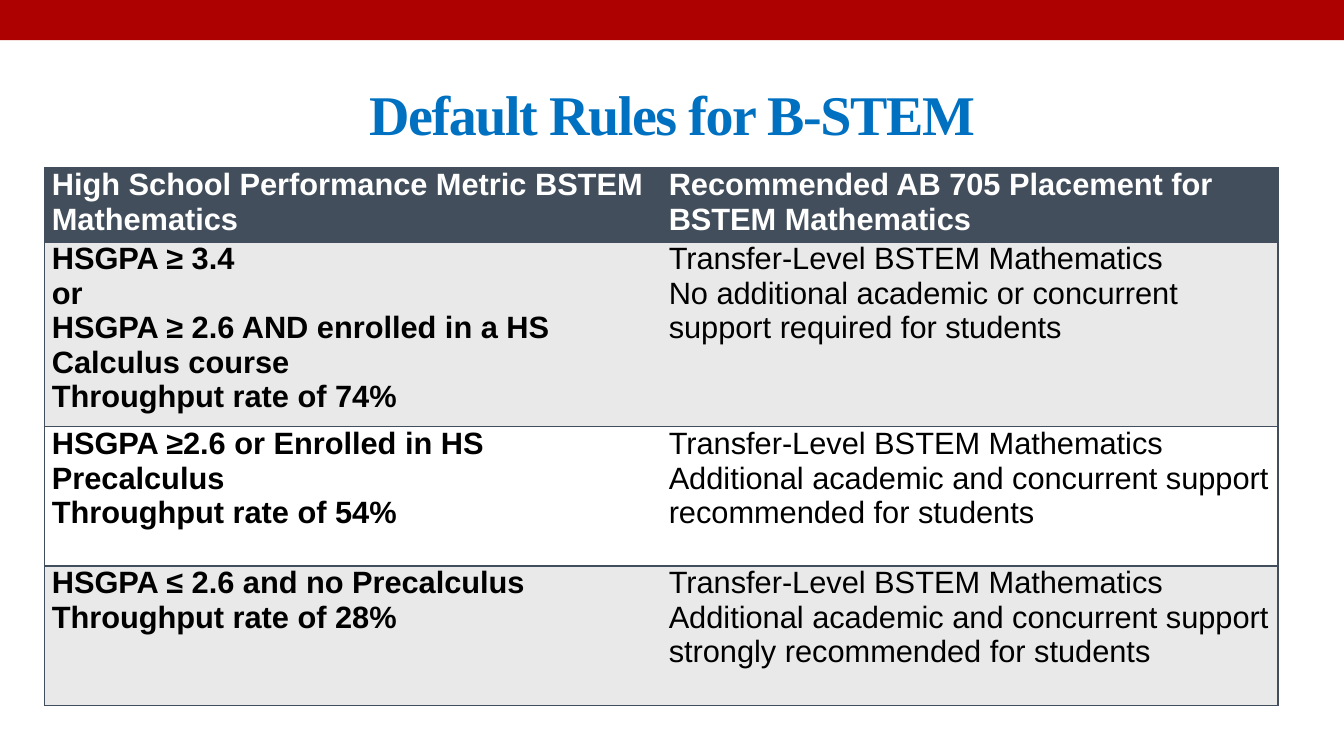
from dataclasses import dataclass

from lxml.etree import SubElement
from pptx import Presentation
from pptx.dml.color import RGBColor as RGB
from pptx.enum.shapes import MSO_SHAPE as Shape
from pptx.enum.text import MSO_ANCHOR as Anchor, PP_ALIGN as Align
from pptx.oxml.ns import qn
from pptx.slide import Slide
from pptx.table import _Cell as Cell
from pptx.util import Pt

COLORS = {
    "banner": "AD0101",
    "title": "0070C0",
    "header": "424E5B",
    "band": "E9E9EA",
    "white": "FFFFFF",
    "black": "000000",
}
COLUMN_WIDTH = 440.64


@dataclass
class RuleRow:
    height: float
    metric: list[str]
    placement: list[str]
    fill: str
    color: str = "black"
    header: bool = False


TRANSFER = "Transfer-Level BSTEM Mathematics"
RULES = [
    RuleRow(50, ["High School Performance Metric BSTEM Mathematics"],
            ["Recommended AB 705 Placement for BSTEM Mathematics"],
            "header", "white", True),
    RuleRow(124.3,
            ["HSGPA ≥ 3.4", "or",
             "HSGPA ≥ 2.6 AND enrolled in a HS Calculus course",
             "Throughput rate of 74%"],
            [TRANSFER, "No additional academic or concurrent support required for students"],
            "band"),
    RuleRow(99.5,
            ["HSGPA ≥2.6 or Enrolled in HS Precalculus", "Throughput rate of 54%"],
            [TRANSFER, "Additional academic and concurrent support recommended for students"],
            "white"),
    RuleRow(99.5,
            ["HSGPA ≤ 2.6 and no Precalculus", "Throughput rate of 28%"],
            [TRANSFER,
             "Additional academic and concurrent support strongly recommended for students"],
            "band"),
]


def rgb(name: str) -> RGB:
    return RGB.from_string(COLORS[name])


def draw_banner(slide: Slide) -> None:
    banner = slide.shapes.add_shape(Shape.RECTANGLE, 0, 0, Pt(960), Pt(28.8))
    banner.shadow.inherit = False
    banner.fill.solid()
    banner.fill.fore_color.rgb = rgb("banner")
    banner.line.fill.background()


def draw_title(slide: Slide) -> None:
    frame = slide.shapes.add_textbox(Pt(48), Pt(42), Pt(864), Pt(78)).text_frame
    frame.word_wrap = True
    frame.vertical_anchor = Anchor.MIDDLE
    heading = frame.paragraphs[0]
    heading.alignment = Align.CENTER
    heading.font.name = "Times New Roman"
    heading.font.size = Pt(40)
    heading.font.bold = True
    heading.font.color.rgb = rgb("title")
    run = heading.add_run()
    run.text = "Default Rules for B-STEM"
    run.font._element.set("spc", "-100")


def set_borders(cell: Cell, inner_side: str) -> None:
    properties = cell._tc.get_or_add_tcPr()
    for position, side in enumerate(("lnL", "lnR", "lnT", "lnB")):
        border = SubElement(properties, qn(f"a:{side}"), w=str(Pt(1)))
        if side == inner_side:
            SubElement(border, qn("a:noFill"))
        else:
            fill = SubElement(border, qn("a:solidFill"))
            SubElement(fill, qn("a:srgbClr"), val=COLORS["header"])
        properties.insert(position, border)


def fill_cell(cell: Cell, lines: list[str], rule: RuleRow, bold: bool) -> None:
    cell.margin_left = cell.margin_right = Pt(5.4)
    cell.margin_top = cell.margin_bottom = 0
    cell.fill.solid()
    cell.fill.fore_color.rgb = rgb(rule.fill)
    cell.text = "\n".join(lines)
    for paragraph in cell.text_frame.paragraphs:
        paragraph.font.name = "Arial"
        paragraph.font.size = Pt(22)
        paragraph.font.bold = bold
        paragraph.font.color.rgb = rgb(rule.color)


def draw_rules(slide: Slide) -> None:
    table = slide.shapes.add_table(
        len(RULES), 2, Pt(31.7), Pt(120), Pt(2 * COLUMN_WIDTH),
        Pt(sum(rule.height for rule in RULES))).table
    for column in table.columns:
        column.width = Pt(COLUMN_WIDTH)
    for index, rule in enumerate(RULES):
        table.rows[index].height = Pt(rule.height)
        metric, placement = table.rows[index].cells
        fill_cell(metric, rule.metric, rule, True)
        fill_cell(placement, rule.placement, rule, rule.header)
        set_borders(metric, "lnR")
        set_borders(placement, "lnL")


def main() -> None:
    deck = Presentation()
    deck.slide_width, deck.slide_height = Pt(960), Pt(540)
    slide = deck.slides.add_slide(deck.slide_layouts[6])
    draw_banner(slide)
    draw_title(slide)
    draw_rules(slide)
    deck.save("out.pptx")


if __name__ == "__main__":
    main()
